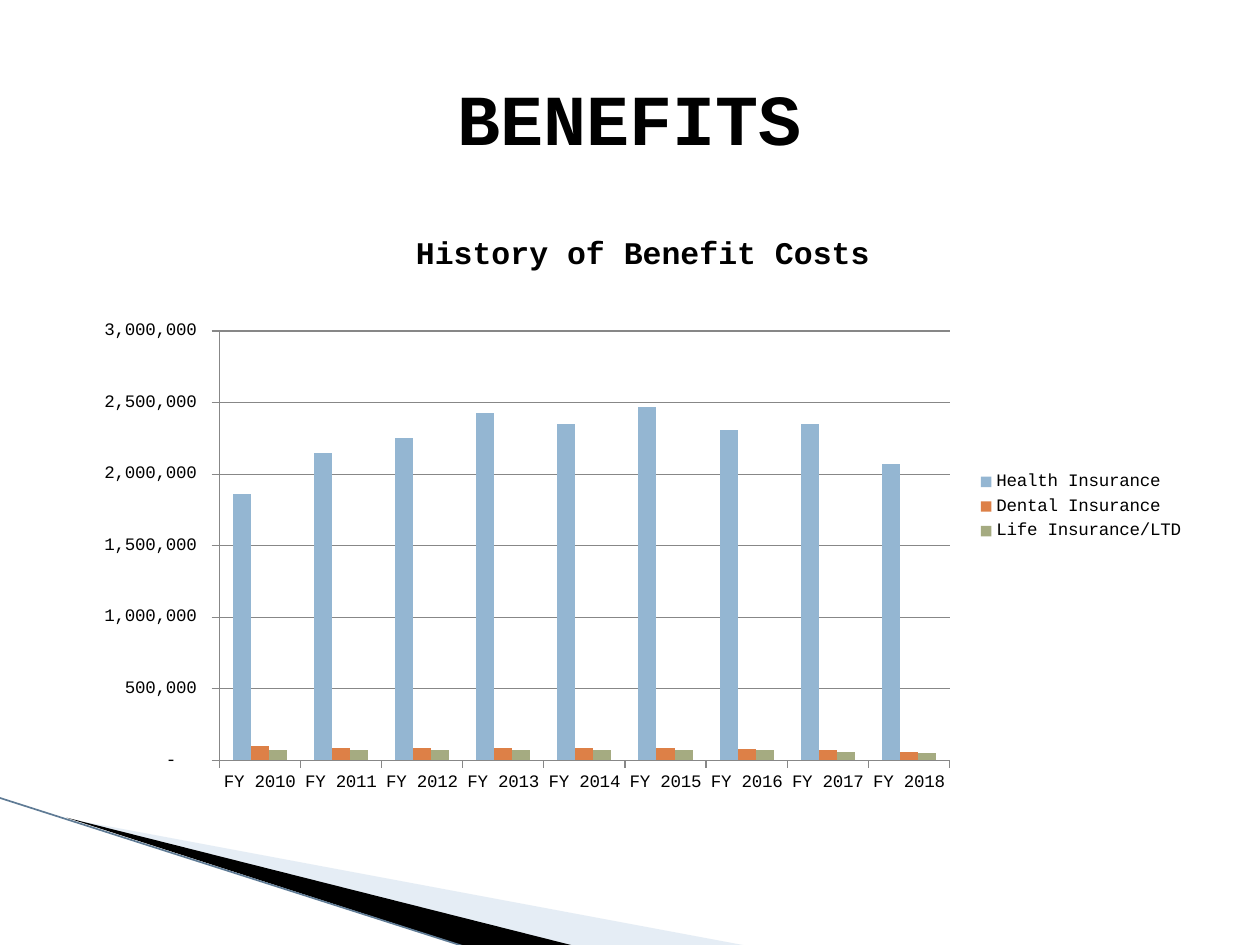
from lxml import etree
from pptx import Presentation
from pptx.chart.data import CategoryChartData
from pptx.dml.color import RGBColor
from pptx.enum.chart import XL_CHART_TYPE, XL_LEGEND_POSITION, XL_TICK_MARK
from pptx.enum.shapes import MSO_CONNECTOR
from pptx.enum.text import MSO_ANCHOR, PP_ALIGN
from pptx.oxml import parse_xml
from pptx.oxml.ns import nsdecls, qn
from pptx.util import Inches, Pt

COLUMNS = XL_CHART_TYPE.COLUMN_CLUSTERED
RIGHT = XL_LEGEND_POSITION.RIGHT
OUTSIDE = XL_TICK_MARK.OUTSIDE
STRAIGHT = MSO_CONNECTOR.STRAIGHT
MIDDLE = MSO_ANCHOR.MIDDLE
CENTER = PP_ALIGN.CENTER

FONT = "Courier New"
COLORS = {"text": "000000", "pale": "C0D3E6", "edge": "5F7B95", "axis": "878787",
          "health": "94B6D2", "dental": "DD8047", "life": "A5AB81"}
YEARS = [f"FY {year}" for year in range(2010, 2019)]
COSTS = {
    "Health Insurance": ("health", [1860000, 2150000, 2250000, 2430000, 2350000,
                                    2470000, 2310000, 2350000, 2070000]),
    "Dental Insurance": ("dental", [100000, 90000, 90000, 90000, 90000,
                                    90000, 80000, 70000, 60000]),
    "Life Insurance/LTD": ("life", [70000, 70000, 70000, 70000, 70000,
                                    70000, 70000, 60000, 50000]),
}
COST_FORMAT = r'_(* #,##0_);_(* \(#,##0\);_(* "-"??_);_('


class SlideBuilder:
    """Holds the deck style and the current page, and adds its elements."""

    def __init__(self, page):
        self.page = page

    def color(self, name):
        return RGBColor.from_string(COLORS[name])

    def style(self, font, size, bold=False):
        values = {"name": FONT, "size": Pt(size), "bold": bold}
        for key, value in values.items():
            setattr(font, key, value)
        font.color.rgb = self.color("text")

    def place(self, shape, *bounds):
        for key, value in zip(("left", "top", "width", "height"), bounds):
            setattr(shape, key, Inches(value))

    def wedge(self, points, color, alpha=None):
        corners = [(Inches(x), Inches(y)) for x, y in points]
        builder = self.page.shapes.build_freeform(*corners[0])
        builder.add_line_segments(corners[1:], close=True)
        shape = builder.convert_to_shape()
        shape.shadow.inherit = False
        shape.fill.solid()
        shape.fill.fore_color.rgb = self.color(color)
        shape.line.fill.background()
        if alpha is not None:
            fill = shape.fill._xPr.find(qn("a:solidFill"))
            etree.SubElement(fill[0], qn("a:alpha"), val=str(alpha * 1000))

    def line(self, start, end, color, width):
        ends = [Inches(value) for value in (*start, *end)]
        connector = self.page.shapes.add_connector(STRAIGHT, *ends)
        connector.line.color.rgb = self.color(color)
        connector.line.width = Pt(width)
        etree.SubElement(connector._element.spPr, qn("a:effectLst"))

    def title(self, text, bounds, size):
        box = self.page.shapes.title
        self.place(box, *bounds)
        frame = box.text_frame
        frame.text = text
        frame.vertical_anchor = MIDDLE
        para = frame.paragraphs[0]
        para.alignment = CENTER
        self.style(para.runs[0].font, size, bold=True)

    def layout(self, element, inner=False, **fractions):
        target = '<c:layoutTarget val="inner"/>' if inner else ""
        modes = "".join(f'<c:{key}Mode val="edge"/>' for key in "xy")
        sizes = "".join(f'<c:{key} val="{value}"/>' for key, value in fractions.items())
        for old in element.findall(qn("c:layout")):
            element.remove(old)
        layout = parse_xml(f'<c:layout {nsdecls("c")}><c:manualLayout>{target}{modes}{sizes}'
                           '</c:manualLayout></c:layout>')
        text = element.find(qn("c:tx"))
        if text is None:
            element.insert(0, layout)
        else:
            text.addnext(layout)

    def chart(self, heading, bounds):
        data = CategoryChartData()
        data.categories = YEARS
        for name, (_, values) in COSTS.items():
            data.add_series(name, values)
        sides = [Inches(value) for value in bounds]
        chart = self.page.shapes.add_chart(COLUMNS, *sides, data).chart
        self.style(chart.font, 10)

        chart.has_title = True
        frame = chart.chart_title.text_frame
        frame.text = heading
        self.style(frame.paragraphs[0].runs[0].font, 18, bold=True)
        chart.chart_title.include_in_layout = False
        self.layout(chart.chart_title._element, x=0.3, y=0.04)

        chart.has_legend = True
        chart.legend.position = RIGHT
        chart.legend.include_in_layout = False

        plot = chart.plots[0]
        for key, value in {"gap_width": 150, "overlap": 0, "vary_by_categories": False}.items():
            setattr(plot, key, value)
        for series, (color, _) in zip(plot.series, COSTS.values()):
            series.format.fill.solid()
            series.format.fill.fore_color.rgb = self.color(color)
        self.layout(chart._chartSpace.chart.plotArea, inner=True,
                    x=0.13, y=0.21, w=0.65, h=0.71)
        self.axes(chart)

    def axes(self, chart):
        costs = chart.value_axis
        costs.minimum_scale, costs.maximum_scale, costs.major_unit = 0, 3000000, 500000
        costs.has_major_gridlines = True
        costs.tick_labels.number_format = COST_FORMAT
        costs.tick_labels.number_format_is_linked = False
        for axis in (costs, chart.category_axis):
            axis.major_tick_mark = OUTSIDE
        for part in (costs, chart.category_axis, costs.major_gridlines):
            part.format.line.color.rgb = self.color("axis")
            part.format.line.width = Pt(0.75)


def main():
    deck = Presentation()
    deck.slide_width, deck.slide_height = Inches(10), Inches(7.5)
    builder = SlideBuilder(deck.slides.add_slide(deck.slide_layouts[5]))
    builder.wedge([(0.55, 6.5), (5.95, 7.51), (4.56, 7.51)], "pale", alpha=40)
    builder.wedge([(0.53, 6.49), (4.57, 7.51), (3.72, 7.52)], "text")
    builder.line((-0.01, 6.33), (3.71, 7.52), "edge", 0.95)
    builder.title("BENEFITS", (0.5, 0.3, 9, 1.25), 41)
    builder.chart("History of Benefit Costs", (0.58, 1.62, 8.92, 4.8))
    deck.save("out.pptx")


if __name__ == "__main__":
    main()
